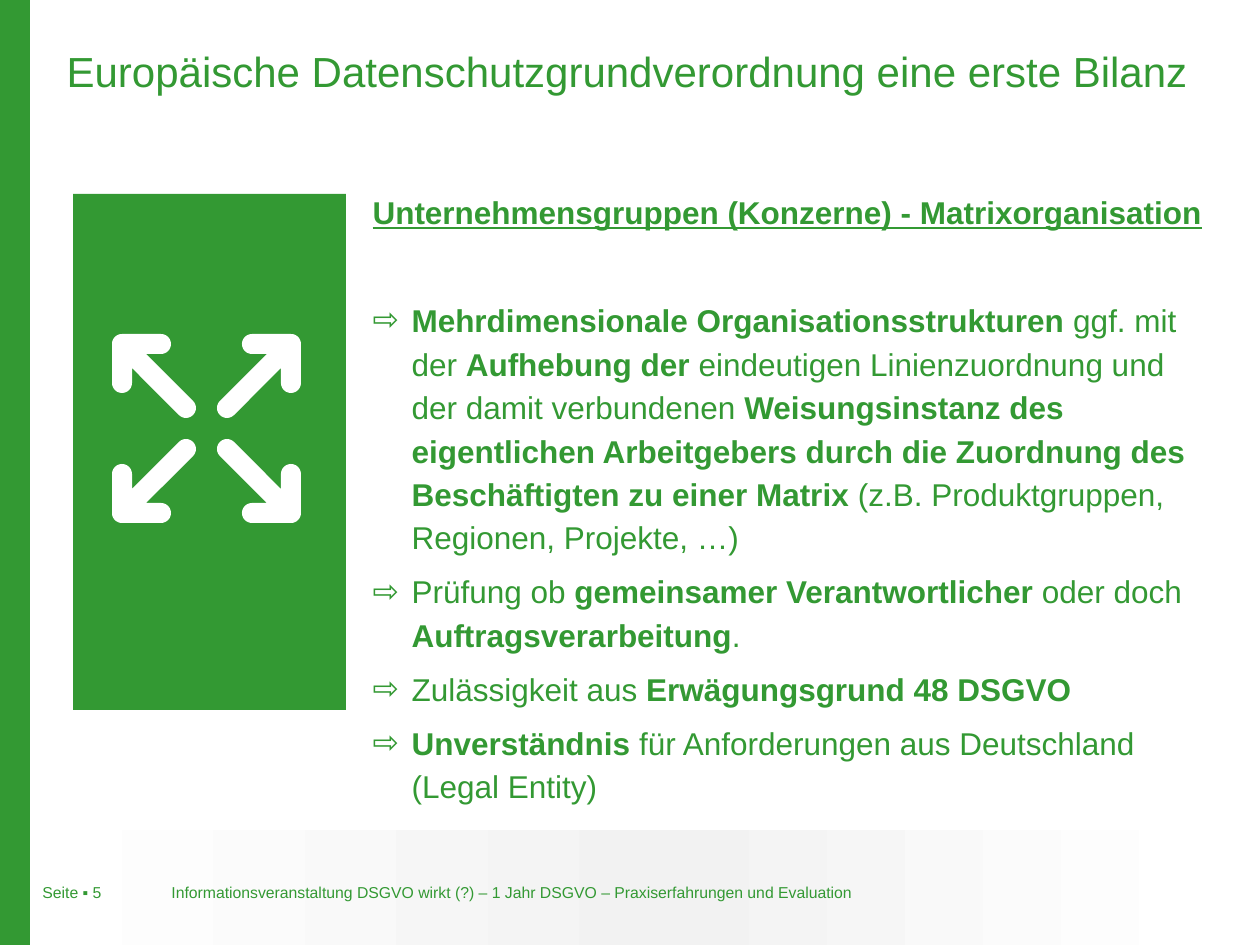
from copy import deepcopy
from math import cos, radians, sin

from lxml.etree import SubElement
from pptx import Presentation
from pptx.dml.color import RGBColor
from pptx.enum.shapes import MSO_SHAPE
from pptx.enum.text import MSO_ANCHOR, MSO_AUTO_SIZE, PP_ALIGN
from pptx.oxml.ns import qn
from pptx.util import Emu, Pt

SCALE = 914400 / 126
GREEN, WHITE, GREY = "339933", "FFFFFF", "F2F2F2"
HEAD = "Unternehmensgruppen (Konzerne) - Matrixorganisation"
ITEMS = [
    "*Mehrdimensionale Organisationsstrukturen *ggf. mit der *Aufhebung der *"
    "eindeutigen Linienzuordnung und der damit verbundenen *Weisungsinstanz des "
    "eigentlichen Arbeitgebers durch die Zuordnung des Beschäftigten zu einer "
    "Matrix *(z.B. Produktgruppen, Regionen, Projekte, …)",
    "Prüfung ob *gemeinsamer Verantwortlicher *oder doch *Auftragsverarbeitung*.",
    "Zulässigkeit aus *Erwägungsgrund 48 DSGVO*",
    "*Unverständnis* für Anforderungen aus Deutschland (Legal Entity)",
]


def px(num):
    """Turn px into EMU."""
    return Emu(round(num * SCALE))


def tint(code):
    """Turn a hex string into a colour."""
    return RGBColor.from_string(code)


def place(shape, box):
    """Move a shape to a px box."""
    shape.left, shape.top, shape.width, shape.height = map(px, box)


def paint(shape, code):
    """Give a shape a flat fill without line or shadow."""
    shape.shadow.inherit = False
    shape.fill.solid()
    shape.fill.fore_color.rgb = tint(code)
    shape.line.fill.background()


def rect(slide, box, code):
    """Add a plain rectangle."""
    shape = slide.shapes.add_shape(MSO_SHAPE.RECTANGLE, *map(px, box))
    paint(shape, code)
    return shape


def write(para, text, size, bold=False, under=False):
    """Add one run of green text."""
    run = para.add_run()
    run.text = text
    font = run.font
    font.name, font.size, font.bold, font.underline = "Arial", Pt(size), bold, under
    font.color.rgb = tint(GREEN)


def title(slide, box):
    """Fill the title placeholder."""
    shape = slide.shapes.title
    place(shape, box)
    frame = shape.text_frame
    frame.auto_size = MSO_AUTO_SIZE.NONE
    frame.vertical_anchor = MSO_ANCHOR.TOP
    para = frame.paragraphs[0]
    para.alignment = PP_ALIGN.CENTER
    write(para, "Europäische Datenschutzgrundverordnung eine erste Bilanz", 24)


def indent(para, left, mark=None):
    """Set a hanging indent with or without a bullet."""
    props = para._p.get_or_add_pPr()
    props.set("marL", str(px(left)))
    props.set("indent", str(-px(left)))
    if mark:
        SubElement(props, qn("a:buChar")).set("char", mark)
    else:
        SubElement(props, qn("a:buNone"))


def space(para, above, below):
    """Set line and paragraph spacing."""
    para.line_spacing = 1.15
    para.space_before, para.space_after = Pt(above), Pt(below)


def body(slide, box):
    """Fill the body placeholder with heading and list."""
    shape = slide.placeholders[1]
    place(shape, box)
    shape.fill.solid()
    shape.fill.fore_color.rgb = tint(WHITE)
    frame = shape.text_frame
    frame.auto_size = MSO_AUTO_SIZE.NONE
    para = frame.paragraphs[0]
    indent(para, 0)
    space(para, 0, 34)
    write(para, HEAD, 18, True, True)
    for item in ITEMS:
        para = frame.add_paragraph()
        indent(para, 39, "⇨")
        space(para, 3, 3)
        for spot, part in enumerate(item.split("*")):
            if part:
                write(para, part, 18, spot % 2 == 1)


def arc(x, y, start, end):
    """List points on an arc of radius 10."""
    steps = [radians(start + (end - start) * i / 12) for i in range(13)]
    return [(x + 10 * cos(a), y + 10 * sin(a)) for a in steps]


def arrow(slide, x, y, right, down):
    """Draw a round arrow from its corner toward the given side."""
    dots = (arc(10, 10, 180, 270) + arc(49, 10, -90, 90) + [(34, 20)]
            + arc(74, 74, -45, 135) + [(20, 34)] + arc(10, 49, 0, 180))
    dots = [(px(x + right * a), px(y + down * b)) for a, b in dots]
    form = slide.shapes.build_freeform(*dots[0])
    form.add_line_segments(dots[1:])
    paint(form.convert_to_shape(), WHITE)


def panel(slide, box):
    """Draw the green panel with four arrows pointing outward."""
    rect(slide, box, GREEN)
    left, top = box[0] + 39, box[1] + 140
    for x, right in ((left, 1), (left + 189, -1)):
        for y, down in ((top, 1), (top + 189, -1)):
            arrow(slide, x, y, right, down)


def label(slide, box, text, align):
    """Add a small footer text."""
    frame = slide.shapes.add_textbox(*map(px, box)).text_frame
    frame.word_wrap = True
    para = frame.paragraphs[0]
    para.alignment = align
    write(para, text, 9)


def footer(slide, box):
    """Draw the shaded footer band and its texts."""
    x, y = box[:2]
    band = rect(slide, box, WHITE)
    band.fill.gradient()
    band.fill.gradient_angle = 0
    stops = band._element.spPr.find(".//" + qn("a:gsLst"))
    stops.append(deepcopy(stops[0]))
    for stop, spot, code in zip(band.fill.gradient_stops, (0, 0.54, 1),
                                (WHITE, GREY, WHITE)):
        stop.position = spot
        stop.color.rgb = tint(code)
    label(slide, (x, y + 47, 185, 34), "Seite ▪ 5", PP_ALIGN.LEFT)
    label(slide, (x + 114, y + 47, 735, 34),
          "Informationsveranstaltung DSGVO wirkt (?) – 1 Jahr DSGVO – "
          "Praxiserfahrungen und Evaluation", PP_ALIGN.CENTER)


def main():
    """Build and save the slide."""
    deck = Presentation()
    deck.slide_width, deck.slide_height = px(1260), px(945)
    slide = deck.slides.add_slide(deck.slide_layouts[1])
    rect(slide, (0, 0, 30, 945), GREEN)
    footer(slide, (30, 830, 1187, 115))
    title(slide, (40, 39, 1174, 90))
    body(slide, (360, 181, 865, 633))
    panel(slide, (73, 194, 273, 516))
    deck.save("out.pptx")


if __name__ == "__main__":
    main()
